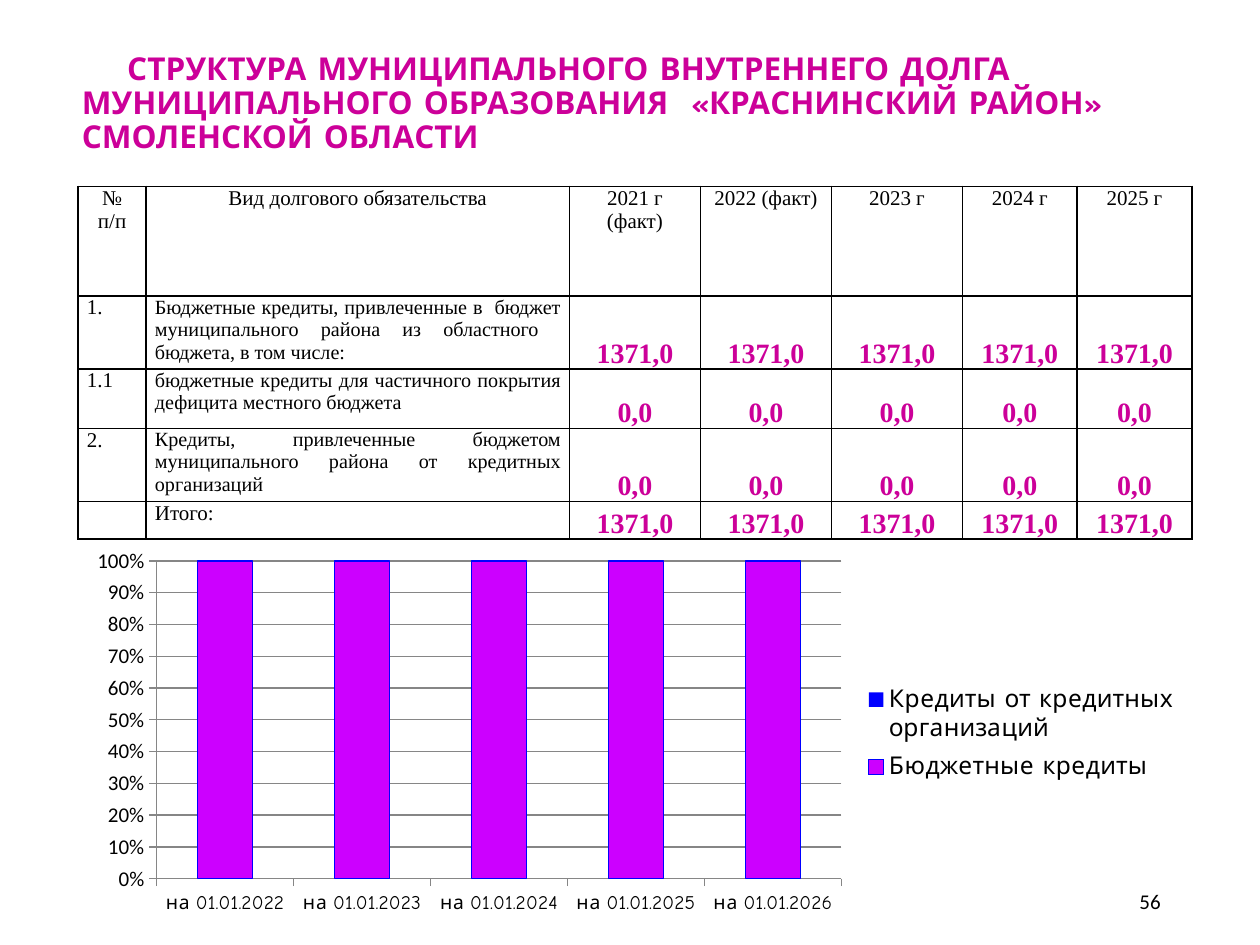
from typing import NamedTuple

from lxml import etree
from pptx import Presentation
from pptx import util as u
from pptx.chart.data import CategoryChartData
from pptx.dml.color import RGBColor
from pptx.enum import chart as ch, text
from pptx.oxml.ns import qn

MAGENTA = RGBColor(0xCC, 0x00, 0x99)
VIOLET = RGBColor(0xCC, 0x00, 0xFF)
BLUE = RGBColor(0x00, 0x00, 0xFF)
BLACK = RGBColor(0x00, 0x00, 0x00)
WHITE = RGBColor(0xFF, 0xFF, 0xFF)
GREY = RGBColor(0x86, 0x86, 0x86)
SERIF, SANS, COMIC = "Times New Roman", "Calibri", "Comic Neue"
ALIGN, ANCHOR = text.PP_ALIGN, text.MSO_ANCHOR


class Style(NamedTuple):
    size: float
    name: str = SERIF
    color: RGBColor = BLACK
    bold: bool = False
    align: text.PP_ALIGN = ALIGN.LEFT
    anchor: text.MSO_ANCHOR = ANCHOR.TOP


class Debt(NamedTuple):
    number: str
    kind: str
    amount: str


HEADER = Style(12, align=ALIGN.CENTER)
PLAIN = Style(12)
KIND = Style(11.5, align=ALIGN.JUSTIFY)
AMOUNT = Style(16, color=MAGENTA, bold=True, align=ALIGN.CENTER, anchor=ANCHOR.BOTTOM)

TITLE = ("СТРУКТУРА МУНИЦИПАЛЬНОГО ВНУТРЕННЕГО ДОЛГА МУНИЦИПАЛЬНОГО ОБРАЗОВАНИЯ  "
         "«КРАСНИНСКИЙ РАЙОН» СМОЛЕНСКОЙ ОБЛАСТИ")
HEADINGS = ["№ п/п", "Вид долгового обязательства", "2021 г (факт)", "2022 (факт)",
            "2023 г", "2024 г", "2025 г"]
DEBTS = [
    Debt("1.", "Бюджетные кредиты, привлеченные в  бюджет муниципального района "
               "из областного  бюджета, в том числе:", "1371,0"),
    Debt("1.1", "бюджетные кредиты для частичного покрытия дефицита местного бюджета", "0,0"),
    Debt("2.", "Кредиты, привлеченные бюджетом муниципального района "
               "от кредитных организаций", "0,0"),
    Debt("", "Итого:", "1371,0"),
]
COLUMN_WIDTHS = [0.54, 3.36, 1.04, 1.04, 1.04, 0.91, 0.91]
ROW_HEIGHTS = [0.87, 0.58, 0.47, 0.58, 0.24]


def set_font(font, style: Style) -> None:
    for key, value in {"size": u.Pt(style.size), "name": style.name,
                       "bold": style.bold}.items():
        setattr(font, key, value)
    font.color.rgb = style.color


def write(frame, words: str, style: Style) -> None:
    frame.vertical_anchor = style.anchor
    para = frame.paragraphs[0]
    para.alignment = style.align
    span = para.add_run()
    span.text = words
    set_font(span.font, style)


def add_borders(cell) -> None:
    props = cell._tc.get_or_add_tcPr()
    for place, side in enumerate(("lnL", "lnR", "lnT", "lnB")):
        line = etree.Element(qn(f"a:{side}"), w=str(u.Pt(1)))
        fill = etree.SubElement(line, qn("a:solidFill"))
        etree.SubElement(fill, qn("a:srgbClr"), val=str(BLACK))
        props.insert(place, line)


def fill_cell(cell, words: str, style: Style) -> None:
    for key, value in {"margin_left": 0.07, "margin_right": 0.07,
                       "margin_top": 0, "margin_bottom": 0}.items():
        setattr(cell, key, u.Inches(value))
    cell.fill.solid()
    cell.fill.fore_color.rgb = WHITE
    write(cell.text_frame, words, style)
    cell.vertical_anchor = style.anchor
    add_borders(cell)


def add_debt_table(page) -> None:
    table = page.shapes.add_table(
        len(ROW_HEIGHTS), len(COLUMN_WIDTHS), u.Inches(0.62), u.Inches(1.48),
        u.Inches(sum(COLUMN_WIDTHS)), u.Inches(sum(ROW_HEIGHTS))).table
    table.first_row = table.horz_banding = False
    for column, width in zip(table.columns, COLUMN_WIDTHS):
        column.width = u.Inches(width)
    for row, height in zip(table.rows, ROW_HEIGHTS):
        row.height = u.Inches(height)
    for col, heading in enumerate(HEADINGS):
        fill_cell(table.cell(0, col), heading, HEADER)
    for row, debt in enumerate(DEBTS, start=1):
        fill_cell(table.cell(row, 0), debt.number, PLAIN)
        fill_cell(table.cell(row, 1), debt.kind, KIND if debt.number else PLAIN)
        for col in range(2, len(HEADINGS)):
            fill_cell(table.cell(row, col), debt.amount, AMOUNT)


def place_part(layout, inner: bool, **bounds: float) -> None:
    """Fix a chart part at fractions of the chart area."""
    manual = etree.SubElement(layout, qn("c:manualLayout"))
    if inner:
        etree.SubElement(manual, qn("c:layoutTarget"), val="inner")
    for tag in ("xMode", "yMode"):
        etree.SubElement(manual, qn(f"c:{tag}"), val="edge")
    for tag, value in bounds.items():
        etree.SubElement(manual, qn(f"c:{tag}"), val=str(value))


def new_layout(parent, position: int):
    for old in parent.findall(qn("c:layout")):
        parent.remove(old)
    layout = etree.Element(qn("c:layout"))
    parent.insert(position, layout)
    return layout


def add_debt_chart(page) -> None:
    data = CategoryChartData()
    data.categories = [f"на 01.01.{year}" for year in range(2022, 2027)]
    data.add_series("Бюджетные кредиты", [100] * 5)
    data.add_series("Кредиты от кредитных организаций", [0] * 5)
    chart = page.shapes.add_chart(
        ch.XL_CHART_TYPE.COLUMN_STACKED_100, u.Inches(0.62), u.Inches(4.3),
        u.Inches(8.91), u.Inches(3.04), data).chart
    chart.has_title = False
    set_font(chart.font, Style(18, SANS))

    # Bars
    plot = chart.plots[0]
    plot.vary_by_categories = False
    plot.gap_width, plot.overlap = 150, 100
    for series, color in zip(plot.series, (VIOLET, BLUE)):
        series.format.fill.solid()
        series.format.fill.fore_color.rgb = color
    border = plot.series[0].format.line
    border.color.rgb = BLUE
    border.width = u.Pt(0.75)

    # Axes
    for axis, style in ((chart.category_axis, Style(11, COMIC)),
                        (chart.value_axis, Style(12, SANS))):
        axis.major_tick_mark = ch.XL_TICK_MARK.OUTSIDE
        axis.format.line.color.rgb = GREY
        set_font(axis.tick_labels.font, style)
    values = chart.value_axis
    values.has_major_gridlines = True
    values.major_gridlines.format.line.color.rgb = GREY
    values.tick_labels.number_format = "0%"
    values.tick_labels.number_format_is_linked = False

    # Legend and plot placement
    chart.has_legend = True
    chart.legend.position = ch.XL_LEGEND_POSITION.RIGHT
    chart.legend.include_in_layout = False
    set_font(chart.legend.font, Style(14, COMIC))
    area = chart._chartSpace.chart.plotArea
    place_part(new_layout(area, 0), True, x=0.07, y=0.05, w=0.61, h=0.83)
    place_part(new_layout(chart.legend._element, 1), False, x=0.69, y=0.35, w=0.3, h=0.3)


def main() -> None:
    deck = Presentation()
    deck.slide_width, deck.slide_height = u.Inches(10), u.Inches(7.5)
    page = deck.slides.add_slide(deck.slide_layouts[5])

    # Title
    title = page.shapes.title
    for key, value in {"left": 0.55, "top": 0.23, "width": 9.06, "height": 1.48}.items():
        setattr(title, key, u.Inches(value))
    frame = title.text_frame
    frame.word_wrap = True
    frame.auto_size = text.MSO_AUTO_SIZE.NONE
    frame.margin_top = u.Inches(0.19)
    write(frame, TITLE, Style(18, COMIC, MAGENTA, True))
    para = frame.paragraphs[0]
    para.line_spacing = 0.9
    para._p.get_or_add_pPr().set("indent", str(u.Inches(0.36)))

    # Slide number
    box = page.shapes.add_textbox(u.Inches(7.06), u.Inches(6.95), u.Inches(2.25), u.Inches(0.4))
    box.text_frame.word_wrap = True
    write(box.text_frame, "56", Style(12, SANS, align=ALIGN.RIGHT, anchor=ANCHOR.MIDDLE))

    add_debt_table(page)
    add_debt_chart(page)
    deck.save("out.pptx")


if __name__ == "__main__":
    main()
